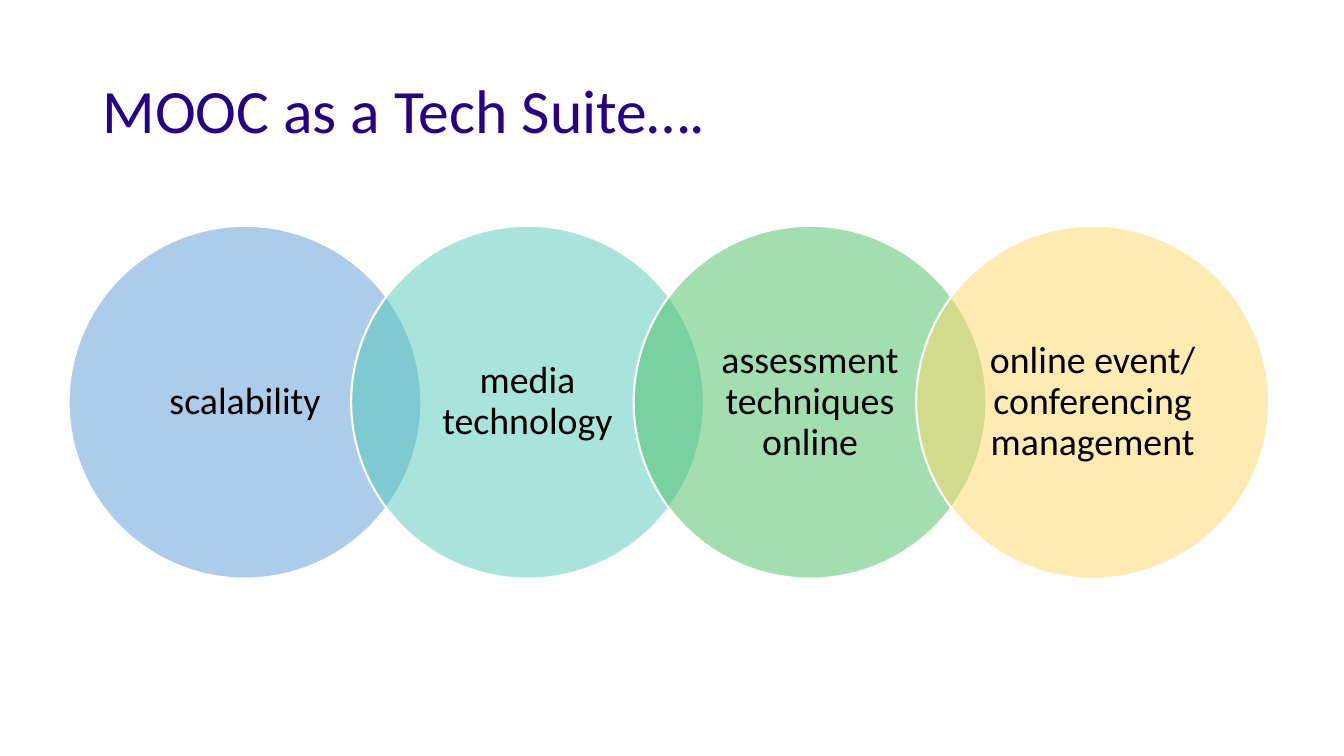
from lxml import etree
from pptx import Presentation
from pptx.dml.color import RGBColor
from pptx.enum import shapes, text
from pptx.oxml import ns
from pptx.util import Cm, Pt

FONT = "Calibri"
TITLE_ONLY = 5
CIRCLES = [
    ("scalability", "5B9BD5"),
    ("media technology", "52CAB8"),
    ("assessment techniques online", "49BF64"),
    ("online event/ conferencing management", "FFD966"),
]
FIRST_LEFT, TOP, DIAMETER, PITCH = 1.73, 5.69, 8.89, 7.12


def set_color(color_format, hex_color):
    color_format.rgb = RGBColor.from_string(hex_color)


def set_opacity(fill, percent):
    """Make a solid fill partly transparent."""
    color = fill._xPr.find(ns.qn("a:solidFill"))[0]
    etree.SubElement(color, ns.qn("a:alpha"), val=str(percent * 1000))


def write(frame, words, size, hex_color, alignment):
    frame.word_wrap = True
    frame.auto_size = text.MSO_AUTO_SIZE.NONE
    frame.vertical_anchor = text.MSO_ANCHOR.MIDDLE
    paragraph = frame.paragraphs[0]
    paragraph.alignment = alignment
    paragraph.line_spacing = 0.9
    run = paragraph.add_run()
    run.text = words
    run.font.name = FONT
    run.font.size = Pt(size)
    set_color(run.font.color, hex_color)


def add_title(slide, words):
    title = slide.shapes.title
    title.left, title.top = Cm(2.33), Cm(1.01)
    title.width, title.height = Cm(29.21), Cm(3.68)
    write(title.text_frame, words, 44, "270188", text.PP_ALIGN.LEFT)


def add_circle(slide, left, label, hex_color):
    circle = slide.shapes.add_shape(
        shapes.MSO_SHAPE.OVAL, Cm(left), Cm(TOP), Cm(DIAMETER), Cm(DIAMETER))
    circle.shadow.inherit = False
    circle.fill.solid()
    set_color(circle.fill.fore_color, hex_color)
    set_opacity(circle.fill, 50)
    set_color(circle.line.color, "FFFFFF")
    circle.line.width = Pt(1.5)
    frame = circle.text_frame
    frame.margin_left = frame.margin_right = Cm(0.49)
    frame.margin_top = frame.margin_bottom = Cm(0.1)
    write(frame, label, 27, "000000", text.PP_ALIGN.CENTER)


def main():
    presentation = Presentation()
    presentation.slide_width, presentation.slide_height = Cm(33.87), Cm(19.05)
    slide = presentation.slides.add_slide(presentation.slide_layouts[TITLE_ONLY])
    add_title(slide, "MOOC as a Tech Suite….")
    for index, (label, hex_color) in enumerate(CIRCLES):
        add_circle(slide, FIRST_LEFT + index * PITCH, label, hex_color)
    presentation.save("out.pptx")


if __name__ == "__main__":
    main()
